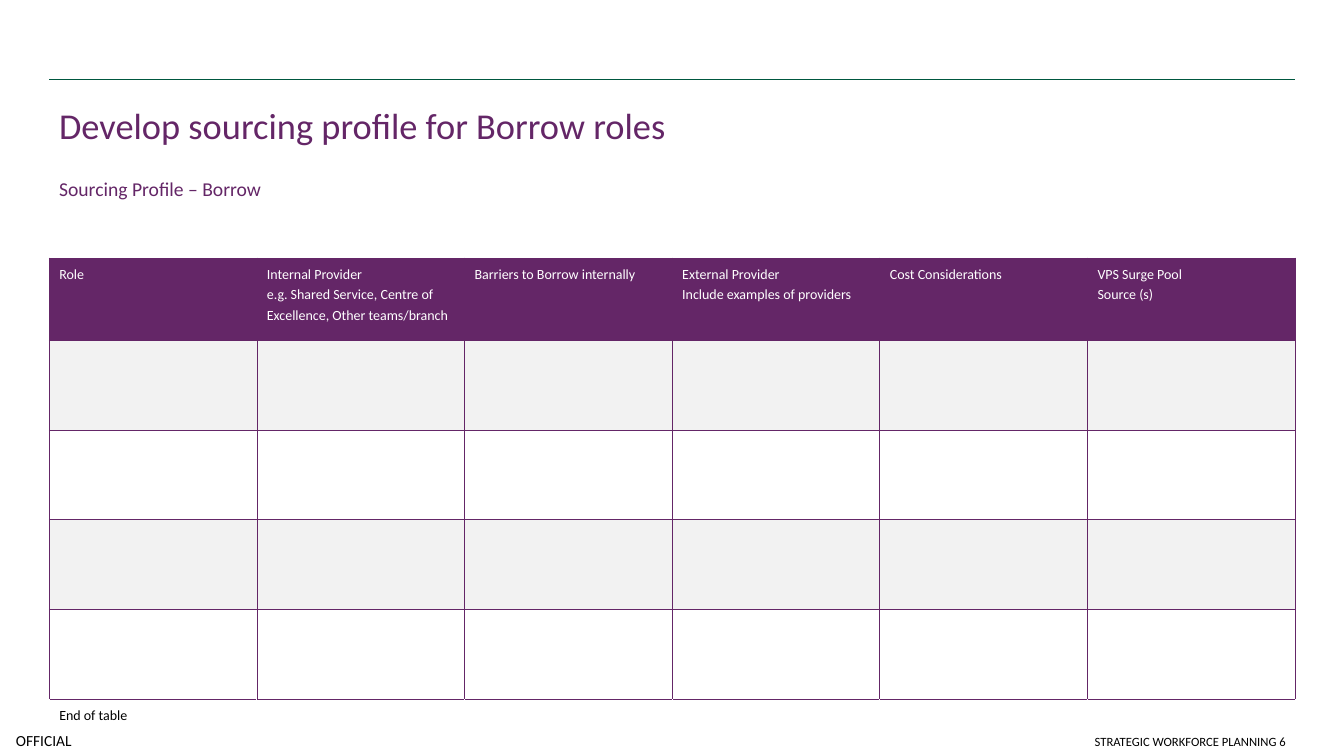
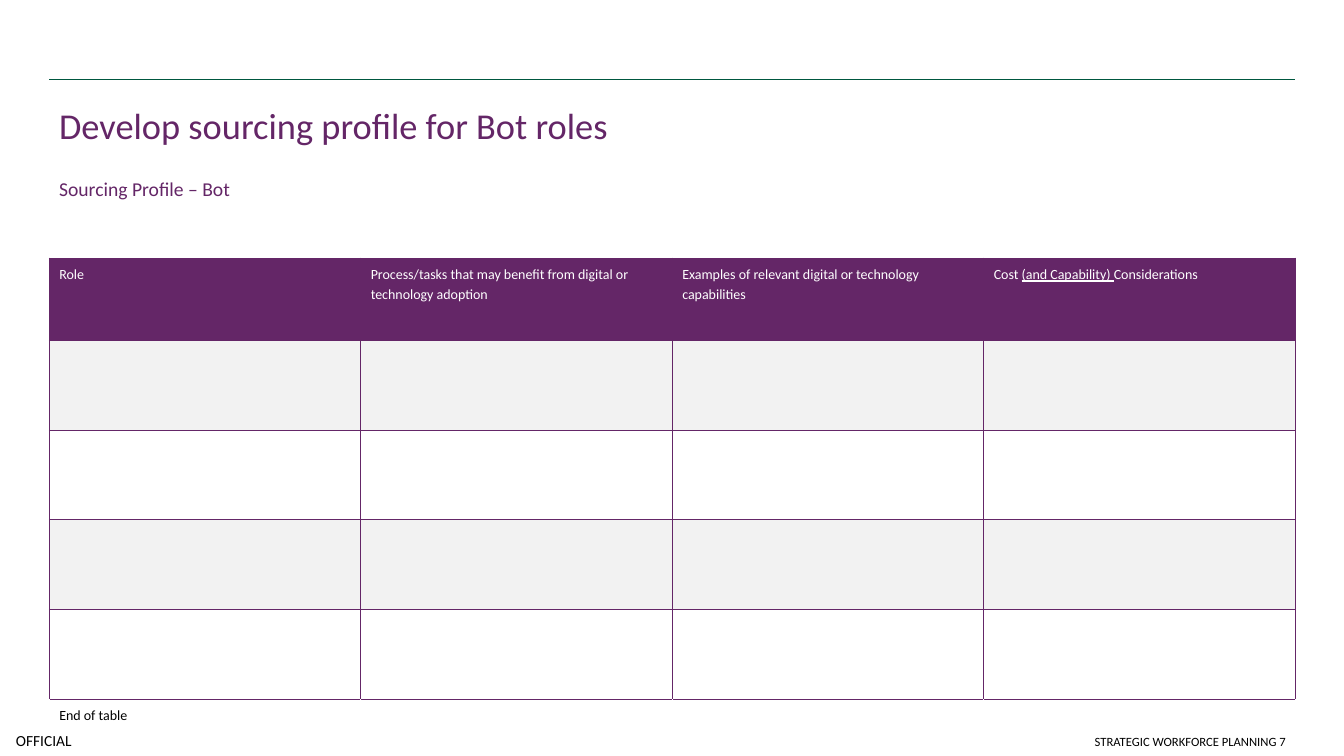
"""Build the sourcing profile slides for Borrow and Bot roles."""
from dataclasses import dataclass

from lxml.etree import SubElement as Sub
from pptx import Presentation as Deck
from pptx.dml.color import RGBColor as Rgb
from pptx.enum.shapes import MSO_CONNECTOR as Link
from pptx.enum.text import MSO_ANCHOR as Anchor, PP_ALIGN as Align
from pptx.oxml.ns import qn
from pptx.slide import Slide
from pptx.table import _Cell as Cell
from pptx.text.text import TextFrame as Frame
from pptx.util import Cm, Pt

FONT = "Calibri"
PLUM, GREEN, GREY, WHITE, BLACK = "642667", "00573F", "F2F2F2", "FFFFFF", "000000"
LEFT, WIDE = 1.24, 31.4
ROWS = [2.08] + [2.26] * 4 + [0.79]
FILLS = [PLUM, GREY, WHITE, GREY, WHITE, WHITE]


@dataclass(frozen=True)
class Style:
    size: float
    tint: str = PLUM
    space: float = 1.0
    align: Align = Align.LEFT
    anchor: Anchor = Anchor.TOP
    inset: bool = True


@dataclass(frozen=True)
class Page:
    kind: str
    number: int
    heads: tuple[str, ...]


TITLE = Style(26, space=1.2)
SUB = Style(14, anchor=Anchor.MIDDLE)
HEAD = Style(10, WHITE, 1.2)
BODY = Style(10, BLACK, 1.2)
MARK = Style(11, BLACK, align=Align.CENTER, anchor=Anchor.MIDDLE, inset=False)
FOOT = Style(9, BLACK, align=Align.RIGHT, anchor=Anchor.BOTTOM)

PAGES = (
    Page("Borrow", 6, (
        "Role",
        "Internal Provider\ve.g. Shared Service, Centre of Excellence, Other teams/branch",
        "Barriers to Borrow internally",
        "External Provider\vInclude examples of providers",
        "Cost Considerations",
        "VPS Surge Pool\nSource (s)",
    )),
    Page("Bot", 7, (
        "Role",
        "Process/tasks that may benefit from digital or technology adoption",
        "Examples of relevant digital or technology capabilities",
        "Cost |(and Capability) |Considerations",
    )),
)


def color(code: str) -> Rgb:
    return Rgb.from_string(code)


def write(frame: Frame, text: str, style: Style) -> None:
    for row, line in enumerate(text.split("\n")):
        para = frame.add_paragraph() if row else frame.paragraphs[0]
        para.alignment, para.line_spacing = style.align, style.space
        font = para.font
        font.name, font.size = FONT, Pt(style.size)
        font.color.rgb = color(style.tint)
        for turn, part in enumerate(line.split("|")):
            for step, bit in enumerate(part.split("\v")):
                if step:
                    para.add_line_break()
                if bit:
                    run = para.add_run()
                    run.text = bit
                    if turn % 2:
                        run.font.underline = True


def label(slide: Slide, text: str, style: Style,
          left: float, top: float, wide: float, high: float) -> None:
    frame = slide.shapes.add_textbox(Cm(left), Cm(top), Cm(wide), Cm(high)).text_frame
    frame.word_wrap, frame.vertical_anchor = True, style.anchor
    if not style.inset:
        frame.margin_left = frame.margin_right = frame.margin_top = frame.margin_bottom = 0
    write(frame, text, style)


def rule(slide: Slide) -> None:
    line = slide.shapes.add_connector(Link.STRAIGHT, Cm(LEFT), Cm(2), Cm(LEFT + WIDE), Cm(2))
    line.line.color.rgb, line.line.width = color(GREEN), Pt(1)
    Sub(line._element.spPr, qn("a:effectLst"))


def paint(cell: Cell, fill: str, sides: str) -> None:
    props = cell._tc.get_or_add_tcPr()
    for side in sides:
        edge = Sub(props, qn(f"a:ln{side}"), w=str(Pt(0.5)))
        Sub(Sub(edge, qn("a:solidFill")), qn("a:srgbClr"), val=PLUM)
    cell.fill.solid()
    cell.fill.fore_color.rgb = color(fill)


def grid(slide: Slide, heads: tuple[str, ...]) -> None:
    count, last = len(heads), len(ROWS) - 1
    table = slide.shapes.add_table(
        len(ROWS), count, Cm(LEFT), Cm(6.5), Cm(WIDE), Cm(sum(ROWS))).table
    table.first_row = table.horz_banding = False
    for col in table.columns:
        col.width = Cm(WIDE / count)
    texts = {(0, spot): head for spot, head in enumerate(heads)}
    texts[last, 0] = "End of table"
    for row, (high, fill) in enumerate(zip(ROWS, FILLS)):
        table.rows[row].height = Cm(high)
        for spot in range(count):
            cell = table.cell(row, spot)
            paint(cell, fill, "T" if row == last else "LRTB")
            write(cell.text_frame, texts.get((row, spot), ""), BODY if row else HEAD)


def build(deck: Deck, page: Page) -> None:
    slide = deck.slides.add_slide(deck.slide_layouts[6])
    rule(slide)
    label(slide, f"Develop sourcing profile for {page.kind} roles", TITLE, LEFT, 2.26, WIDE, 2.59)
    label(slide, f"Sourcing Profile – {page.kind}", SUB, LEFT, 3.76, WIDE, 2)
    grid(slide, page.heads)
    label(slide, "OFFICIAL", MARK, 0, 18.26, 2.21, 0.79)
    label(slide, f"STRATEGIC WORKFORCE PLANNING {page.number}", FOOT, 17.37, 18, 15.28, 1)


def main() -> None:
    deck = Deck()
    deck.slide_width, deck.slide_height = Cm(33.87), Cm(19.05)
    for page in PAGES:
        build(deck, page)
    deck.save("out.pptx")


if __name__ == "__main__":
    main()
